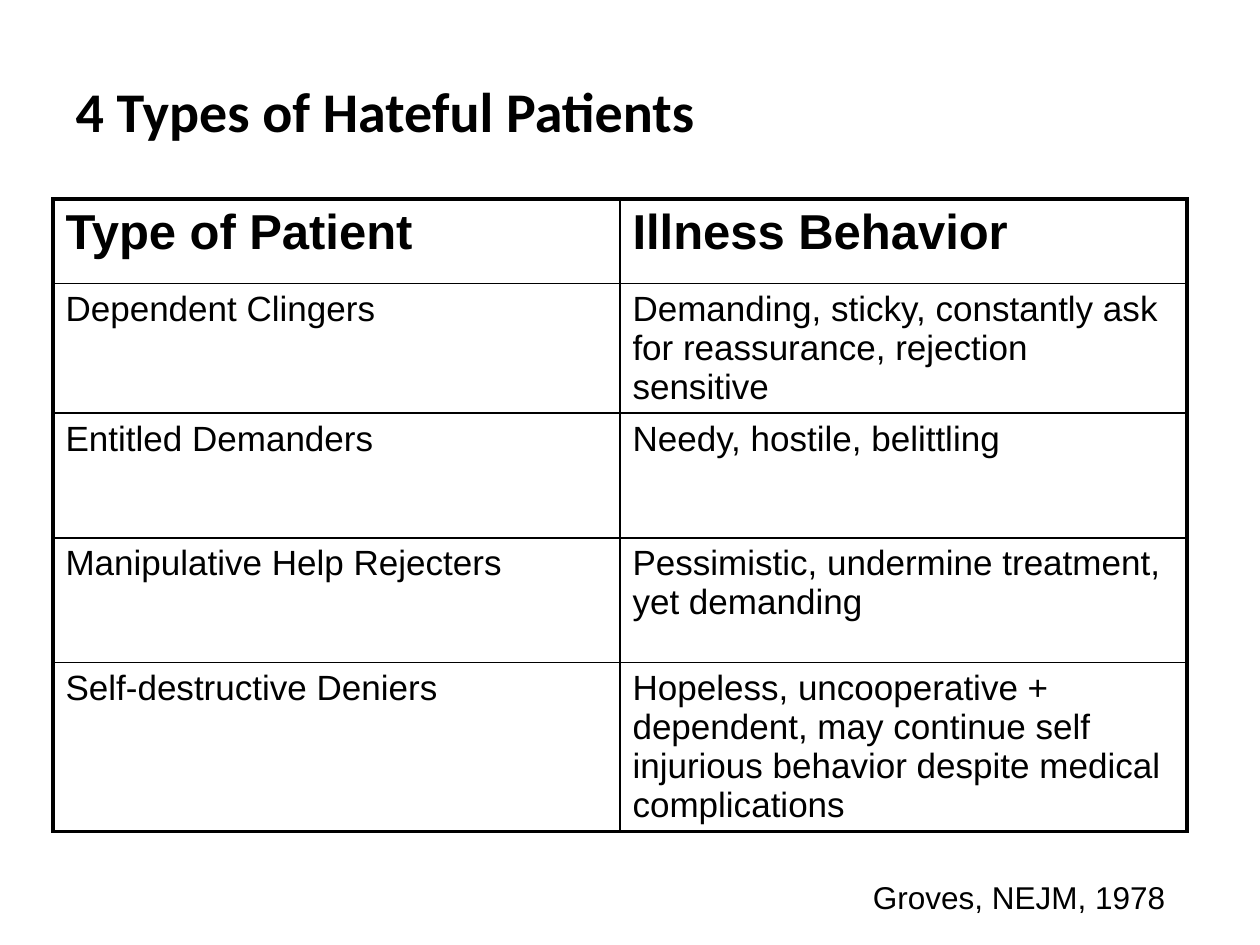
import pptx
import pptx.dml.color
import pptx.enum.text
import pptx.oxml
import pptx.oxml.ns
import pptx.util
from pptx.util import Inches

BLACK = "000000"
HEADINGS = ("Type of Patient", "Illness Behavior")
PATIENT_TYPES = [
    ("Dependent Clingers",
     "Demanding, sticky, constantly ask for reassurance, rejection sensitive"),
    ("Entitled Demanders", "Needy, hostile, belittling"),
    ("Manipulative Help Rejecters",
     "Pessimistic, undermine treatment, yet demanding"),
    ("Self-destructive Deniers",
     "Hopeless, uncooperative + dependent, may continue self injurious "
     "behavior despite medical complications"),
]


def color(value):
    return pptx.dml.color.RGBColor.from_string(value)


class SlideBuilder:
    outer_line = 2.25
    inner_line = 1

    def __init__(self, slide):
        self.slide = slide

    def set_text(self, frame, text, size, font="Arial", bold=False):
        frame.text = text
        paragraph = frame.paragraphs[0]
        paragraph.alignment = pptx.enum.text.PP_ALIGN.LEFT
        for run in paragraph.runs:
            run.font.name = font
            run.font.size = pptx.util.Pt(size)
            run.font.bold = bold
            run.font.color.rgb = color(BLACK)

    def title(self, text, left, top, width, height):
        heading = self.slide.shapes.title
        heading.left, heading.top = Inches(left), Inches(top)
        heading.width, heading.height = Inches(width), Inches(height)
        heading.text_frame.vertical_anchor = pptx.enum.text.MSO_ANCHOR.MIDDLE
        self.set_text(heading.text_frame, text, 32, "Calibri", True)

    def border(self, cell, side, points):
        namespace = pptx.oxml.ns.nsdecls("a")
        line = pptx.oxml.parse_xml(
            f'<a:{side} {namespace} w="{pptx.util.Pt(points)}">'
            f'<a:solidFill><a:srgbClr val="{BLACK}"/></a:solidFill></a:{side}>')
        cell._tc.get_or_add_tcPr().append(line)

    def table(self, rows, left, top, width, heights):
        last_row, last_column = len(rows) - 1, len(rows[0]) - 1
        grid = self.slide.shapes.add_table(
            len(rows), len(rows[0]), Inches(left), Inches(top),
            Inches(width), Inches(sum(heights))).table
        grid.first_row = grid.horz_banding = False
        for r, (texts, height) in enumerate(zip(rows, heights)):
            grid.rows[r].height = Inches(height)
            for c, text in enumerate(texts):
                cell = grid.cell(r, c)
                self.set_text(cell.text_frame, text, 20 if r else 28, bold=r == 0)
                edges = {"lnL": c == 0, "lnR": c == last_column,
                         "lnT": r == 0, "lnB": r == last_row}
                for side, outer in edges.items():
                    self.border(cell, side,
                                self.outer_line if outer else self.inner_line)
                cell.fill.background()

    def text_box(self, text, left, top, width, height):
        box = self.slide.shapes.add_textbox(
            Inches(left), Inches(top), Inches(width), Inches(height))
        box.text_frame.word_wrap = True
        box.text_frame.auto_size = pptx.enum.text.MSO_AUTO_SIZE.SHAPE_TO_FIT_TEXT
        self.set_text(box.text_frame, text, 18)


def main():
    deck = pptx.Presentation()
    deck.slide_width, deck.slide_height = Inches(10), Inches(7.5)
    builder = SlideBuilder(deck.slides.add_slide(deck.slide_layouts[5]))
    builder.title("4 Types of Hateful Patients", 0.5, 0.25, 9, 1.25)
    row_heights = [0.67] + [0.99] * len(PATIENT_TYPES)
    builder.table([HEADINGS] + PATIENT_TYPES, 0.42, 1.58, 9, row_heights)
    builder.text_box("Groves, NEJM, 1978", 6.83, 6.92, 2.52, 0.4)
    deck.save("out.pptx")


if __name__ == "__main__":
    main()
